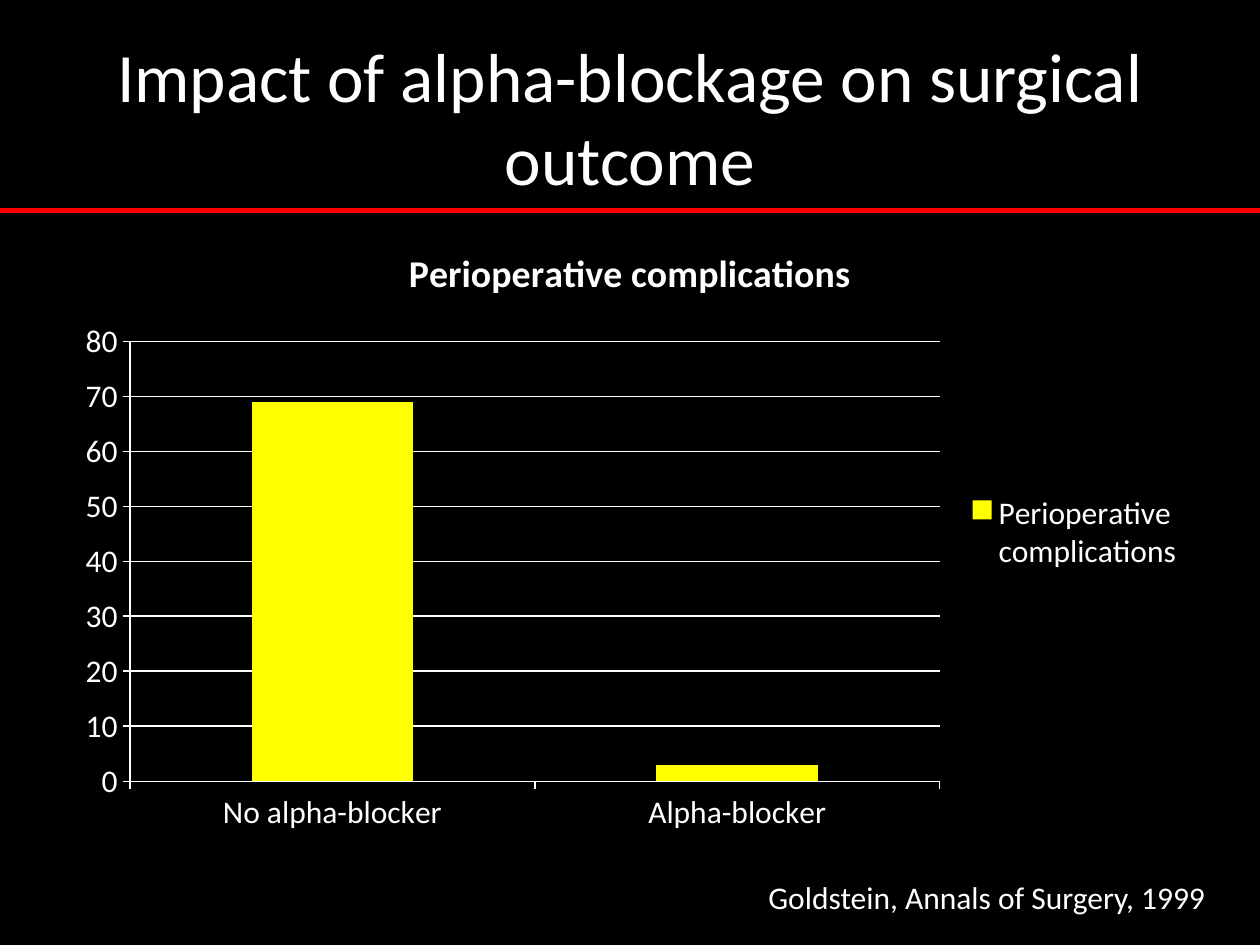
from dataclasses import dataclass

from lxml import etree
from pptx import Presentation
from pptx.chart.data import CategoryChartData
from pptx.dml.color import RGBColor
from pptx.enum.chart import XL_CHART_TYPE, XL_LEGEND_POSITION, XL_TICK_MARK
from pptx.enum.shapes import MSO_CONNECTOR
from pptx.enum.text import MSO_ANCHOR, MSO_AUTO_SIZE, PP_ALIGN
from pptx.oxml.ns import qn
from pptx.util import Inches, Pt

COLUMN = XL_CHART_TYPE.COLUMN_CLUSTERED
LEGEND_RIGHT = XL_LEGEND_POSITION.RIGHT
TICK_OUT = XL_TICK_MARK.OUTSIDE
STRAIGHT = MSO_CONNECTOR.STRAIGHT
MIDDLE, TOP = MSO_ANCHOR.MIDDLE, MSO_ANCHOR.TOP
CENTER, LEFT = PP_ALIGN.CENTER, PP_ALIGN.LEFT
FIT_SHAPE = MSO_AUTO_SIZE.SHAPE_TO_FIT_TEXT

TITLE = "Impact of alpha-blockage on surgical outcome"
CITATION = "Goldstein, Annals of Surgery, 1999"
SERIES = "Perioperative complications"
COMPLICATIONS = {"No alpha-blocker": 69, "Alpha-blocker": 3}

SLIDE_W, SLIDE_H = 10, 7.5
MARGIN = 0.5
CONTENT_W = SLIDE_W - 2 * MARGIN
RULE_Y = 1.67


@dataclass(frozen=True)
class Theme:
    font: str = "Calibri"
    background: RGBColor = RGBColor(0, 0, 0)
    text: RGBColor = RGBColor(255, 255, 255)
    bar: RGBColor = RGBColor(255, 255, 0)
    rule: RGBColor = RGBColor(255, 0, 0)
    title: float = 39.6
    chart_title: float = 21.6
    body: float = 18
    rule_width: float = 3
    axis_width: float = 0.75


THEME = Theme()


def style_font(font, size, bold=False):
    font.name = THEME.font
    font.size = Pt(size)
    font.bold = bold
    font.color.rgb = THEME.text


def add_text(slide, text, box, size, align=LEFT, anchor=TOP, wrap=True):
    sp = slide.shapes.add_textbox(*map(Inches, box))
    tf = sp.text_frame
    tf.word_wrap = wrap
    tf.vertical_anchor = anchor
    if not wrap:
        tf.auto_size = FIT_SHAPE
    p = tf.paragraphs[0]
    p.text = text
    p.alignment = align
    style_font(p.font, size)


def style_line(line):
    line.color.rgb = THEME.text
    line.width = Pt(THEME.axis_width)


def add_complications_chart(slide):
    data = CategoryChartData()
    data.categories = list(COMPLICATIONS)
    data.add_series(SERIES, list(COMPLICATIONS.values()))
    box = (MARGIN, 1.75, CONTENT_W, 4.95)
    chart = slide.shapes.add_chart(COLUMN, *map(Inches, box), data).chart
    style_font(chart.font, THEME.body)

    chart.has_title = True
    p = chart.chart_title.text_frame.paragraphs[0]
    p.text = SERIES
    style_font(p.font, THEME.chart_title, bold=True)
    chart.chart_title.include_in_layout = False

    chart.has_legend = True
    chart.legend.position = LEGEND_RIGHT
    chart.legend.include_in_layout = False

    plot = chart.plots[0]
    plot.gap_width = 150
    plot.vary_by_categories = False
    fill = plot.series[0].format.fill
    fill.solid()
    fill.fore_color.rgb = THEME.bar

    for axis in (chart.category_axis, chart.value_axis):
        axis.major_tick_mark = TICK_OUT
        style_line(axis.format.line)
    chart.value_axis.has_major_gridlines = True
    style_line(chart.value_axis.major_gridlines.format.line)


def add_rule(slide):
    ends = (0, RULE_Y, SLIDE_W, RULE_Y)
    line = slide.shapes.add_connector(STRAIGHT, *map(Inches, ends))
    line.line.color.rgb = THEME.rule
    line.line.width = Pt(THEME.rule_width)
    etree.SubElement(line._element.spPr, qn("a:effectLst"))


def main():
    prs = Presentation()
    prs.slide_width, prs.slide_height = Inches(SLIDE_W), Inches(SLIDE_H)
    s = prs.slides.add_slide(prs.slide_layouts[6])
    s.background.fill.solid()
    s.background.fill.fore_color.rgb = THEME.background
    add_text(s, TITLE, (MARGIN, 0.3, CONTENT_W, 1.25), THEME.title, CENTER, MIDDLE)
    add_complications_chart(s)
    add_text(s, CITATION, (6, 6.92, 3.71, 0.4), THEME.body, wrap=False)
    add_rule(s)
    prs.save("out.pptx")


if __name__ == "__main__":
    main()
